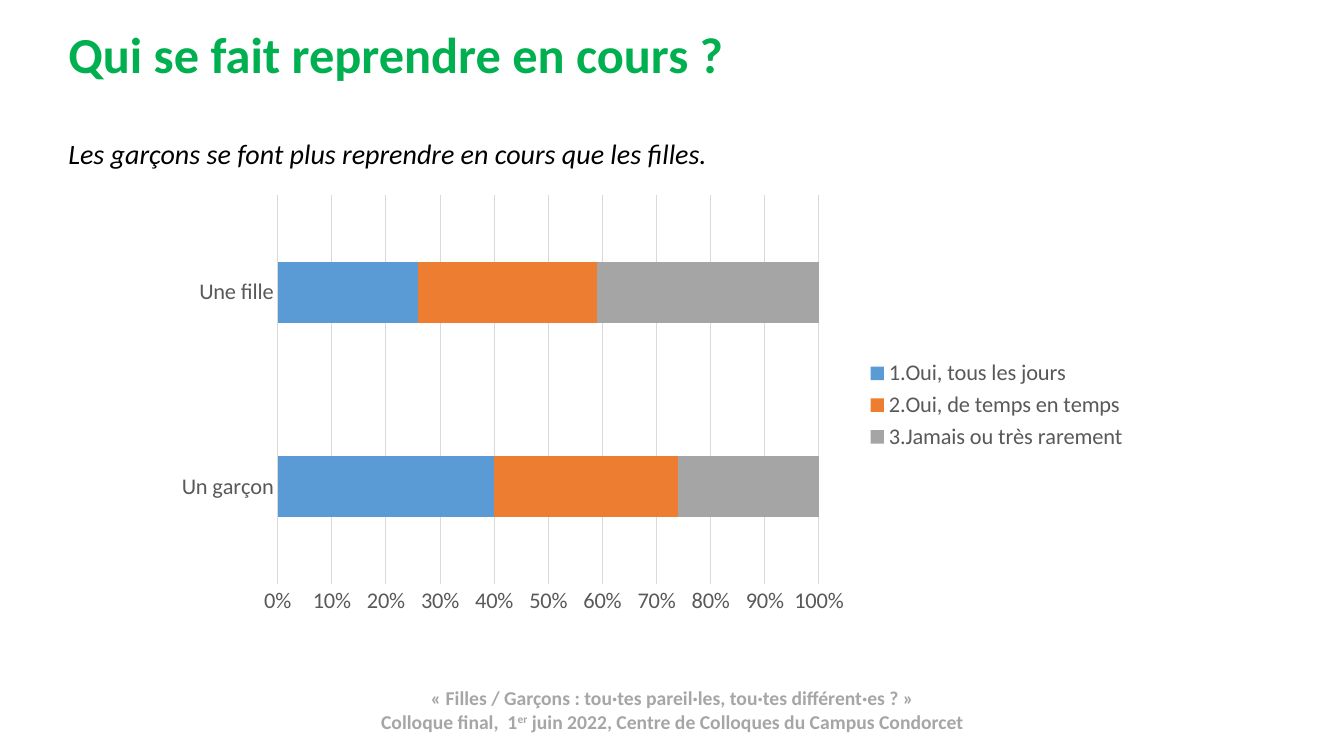
from pptx import Presentation
from pptx.chart.data import CategoryChartData
from pptx.dml.color import RGBColor
from pptx.enum.chart import XL_CHART_TYPE as ChartType, XL_LEGEND_POSITION as LegendPos, XL_TICK_MARK as Tick
from pptx.enum.text import MSO_ANCHOR as Anchor, PP_ALIGN as Align
from pptx.util import Inches, Pt

FONT = "Calibri"
WIDTH, HEIGHT = 13.33, 7.5
GREEN, BLACK, FOOTER_GREY, LABEL_GREY, GRID_GREY = "00B050", "000000", "A6A6A6", "595959", "D9D9D9"

HEADING = "Qui se fait reprendre en cours ?"
FINDING = "Les garçons se font plus reprendre en cours que les filles."
EVENT = "«\u00a0Filles / Garçons : tou·tes pareil·les, tou·tes différent·es ?\u00a0»"
VENUE = [("Colloque final,  1", 0), ("er", 30000), (" juin 2022, Centre de Colloques du Campus Condorcet", 0)]

PUPILS = ["Un garçon", "Une fille"]
ANSWERS = [
    ("1.Oui, tous les jours", (40, 26), "5B9BD5"),
    ("2.Oui, de temps en temps", (34, 33), "ED7D31"),
    ("3.Jamais ou très rarement", (26, 41), "A5A5A5"),
]

HEADING_BOX = (0.58, 0.27, 11.5, 1.45)
CHART_BOX = (1.61, 1.85, 9.68, 4.34)
FOOTER_BOX = (0.92, 6.76, 11.5, 0.57)


def color(value):
    return RGBColor.from_string(value)


def style(font, size, fill, bold=False, italic=False):
    font.name, font.size, font.bold, font.italic = FONT, Pt(size), bold, italic
    font.color.rgb = color(fill)


def add_text(paragraph, text, baseline=0, **look):
    run = paragraph.add_run()
    run.text = text
    style(run.font, **look)
    if baseline:
        run.font._element.set("baseline", str(baseline))


def add_frame(slide, box, anchor):
    frame = slide.shapes.add_textbox(*map(Inches, box)).text_frame
    frame.word_wrap = True
    frame.vertical_anchor = anchor
    return frame.paragraphs[0], frame.add_paragraph()


def add_heading(slide):
    heading, finding = add_frame(slide, HEADING_BOX, Anchor.MIDDLE)
    heading.line_spacing = finding.line_spacing = 0.9
    finding.space_before = Pt(40)
    add_text(heading, HEADING, size=36, fill=GREEN, bold=True)
    add_text(finding, FINDING, size=20, fill=BLACK, italic=True)


def add_footer(slide):
    event, venue = add_frame(slide, FOOTER_BOX, Anchor.TOP)
    event.alignment = venue.alignment = Align.CENTER
    look = dict(size=14, fill=FOOTER_GREY, bold=True)
    add_text(event, EVENT, **look)
    for part, baseline in VENUE:
        add_text(venue, part, baseline, **look)


def add_answers(slide):
    data = CategoryChartData()
    data.categories = PUPILS
    for answer, shares, _ in ANSWERS:
        data.add_series(answer, shares)
    chart = slide.shapes.add_chart(ChartType.BAR_STACKED_100, *map(Inches, CHART_BOX), data).chart
    style(chart.font, 16, BLACK)
    chart.has_title = False
    chart.has_legend = True
    chart.legend.position = LegendPos.RIGHT
    chart.legend.include_in_layout = False
    style(chart.legend.font, 16, LABEL_GREY)

    plot = chart.plots[0]
    plot.gap_width, plot.overlap, plot.vary_by_categories = 219, 100, False
    for series, (_, _, fill) in zip(plot.series, ANSWERS):
        series.format.fill.solid()
        series.format.fill.fore_color.rgb = color(fill)

    pupils, percent = chart.category_axis, chart.value_axis
    for axis in (pupils, percent):
        axis.major_tick_mark = axis.minor_tick_mark = Tick.NONE
        style(axis.tick_labels.font, 16, LABEL_GREY)
    percent.has_major_gridlines = True
    percent.tick_labels.number_format = "0%"
    percent.tick_labels.number_format_is_linked = False
    percent.format.line.fill.background()
    for line in (pupils.format.line, percent.major_gridlines.format.line):
        line.color.rgb = color(GRID_GREY)
        line.width = Pt(0.75)


def main():
    """Build the slide on who is told off in class and save it."""
    deck = Presentation()
    deck.slide_width, deck.slide_height = Inches(WIDTH), Inches(HEIGHT)
    slide = deck.slides.add_slide(deck.slide_layouts[6])
    add_footer(slide)
    add_heading(slide)
    add_answers(slide)
    deck.save("out.pptx")


if __name__ == "__main__":
    main()
